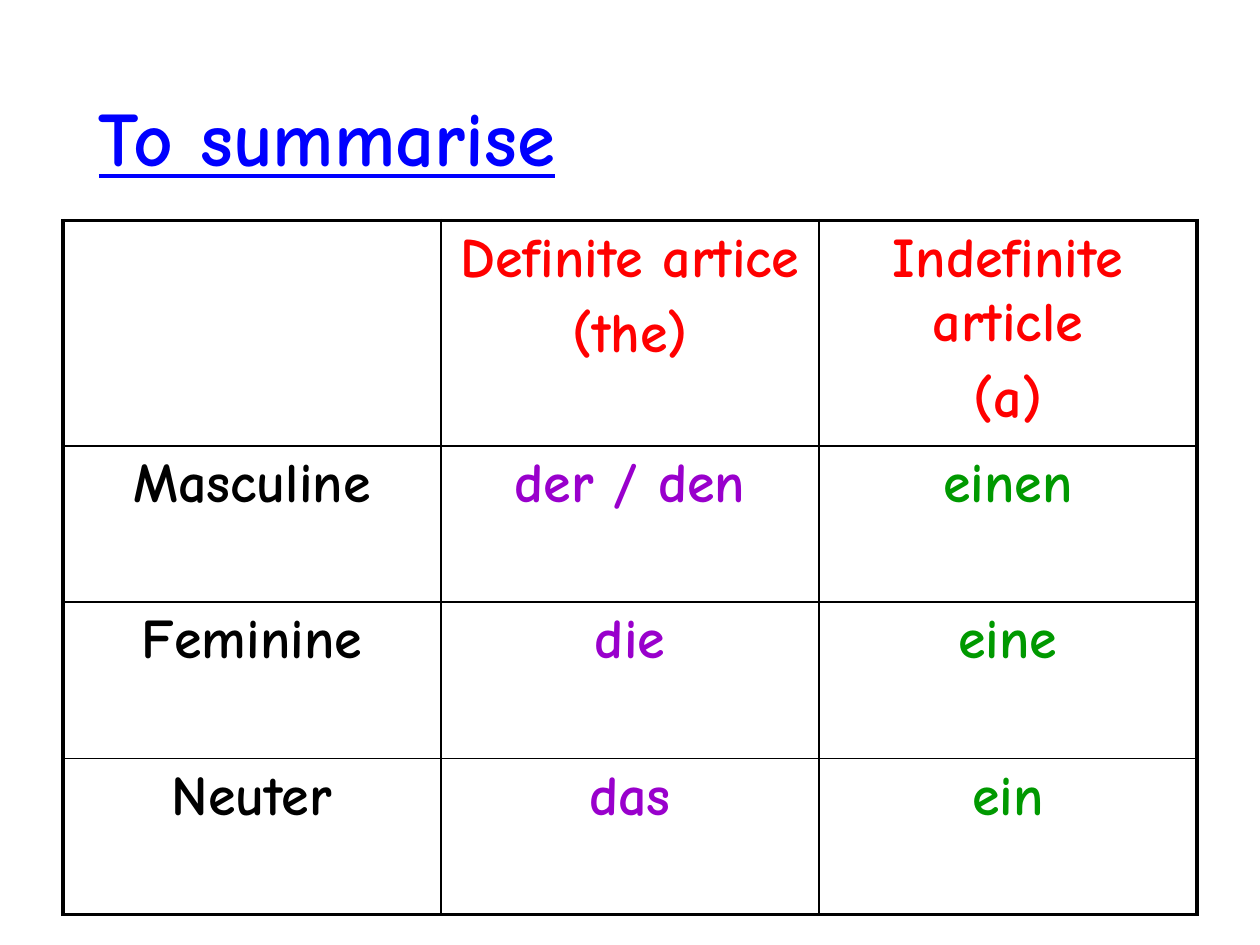
from dataclasses import dataclass

from lxml.etree import SubElement
from pptx import Presentation
from pptx.dml.color import RGBColor
from pptx.enum.text import MSO_ANCHOR, PP_ALIGN
from pptx.oxml.ns import qn
from pptx.util import Pt


@dataclass(frozen=True)
class Theme:
    font: str = "Comic Neue"
    title_size: int = 44
    cell_size: int = 32
    title: str = "0000FF"
    header: str = "FF0000"
    columns: tuple = ("000000", "9900CC", "009900")
    border: str = "000000"
    outer: float = 2.25
    inner: float = 1


THEME = Theme()
ROWS = [
    ["", "Definite artice\n(the)", "Indefinite article\n(a)"],
    ["Masculine", "der / den", "einen"],
    ["Feminine", "die", "eine"],
    ["Neuter", "das", "ein"],
]


def set_font(p, size, color):
    p.font.name = THEME.font
    p.font.size = Pt(size)
    p.font.bold = True
    p.font.color.rgb = RGBColor.from_string(color)


def add_border(cell, side, width):
    """Draw one side (L, R, T or B) of a cell."""
    ln = SubElement(cell._tc.get_or_add_tcPr(), qn(f"a:ln{side}"), w=str(Pt(width)))
    fill = SubElement(ln, qn("a:solidFill"))
    SubElement(fill, qn("a:srgbClr"), val=THEME.border)


prs = Presentation()
prs.slide_width, prs.slide_height = Pt(720), Pt(540)
s = prs.slides.add_slide(prs.slide_layouts[6])

# Title
title = s.shapes.add_textbox(Pt(49.5), Pt(28.75), Pt(621), Pt(104.5))
tf = title.text_frame
tf.word_wrap = True
tf.vertical_anchor = MSO_ANCHOR.MIDDLE
p = tf.paragraphs[0]
p.text = "To summarise"
p.line_spacing = 0.9
p.font.underline = True
set_font(p, THEME.title_size, THEME.title)

# Table of articles
n_rows, n_cols = len(ROWS), len(ROWS[0])
row_height = 89.25
table = s.shapes.add_table(
    n_rows, n_cols, Pt(36), Pt(126), Pt(648), Pt(row_height * n_rows)
).table
table.first_row = table.horz_banding = False

for i, row in enumerate(ROWS):
    table.rows[i].height = Pt(row_height)
    for j, text in enumerate(row):
        cell = table.cell(i, j)
        at_edge = {"L": j == 0, "R": j == n_cols - 1, "T": i == 0, "B": i == n_rows - 1}
        for side, is_outer in at_edge.items():
            add_border(cell, side, THEME.outer if is_outer else THEME.inner)
        cell.fill.background()
        cell.text = text
        for p in cell.text_frame.paragraphs:
            p.alignment = PP_ALIGN.CENTER
            p.space_before = Pt(0.2 * THEME.cell_size)
            set_font(p, THEME.cell_size, THEME.columns[j] if i else THEME.header)

prs.save("out.pptx")
